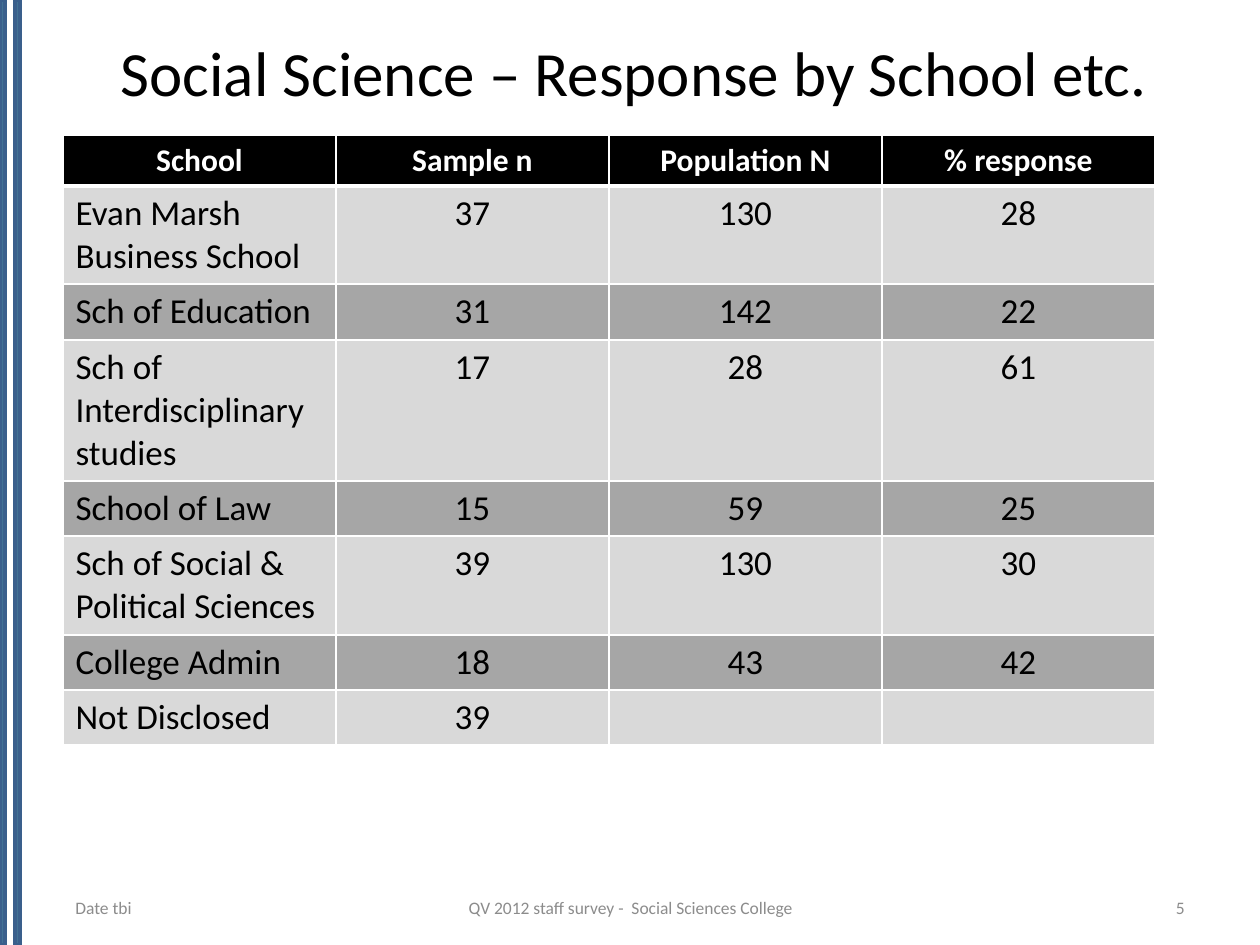
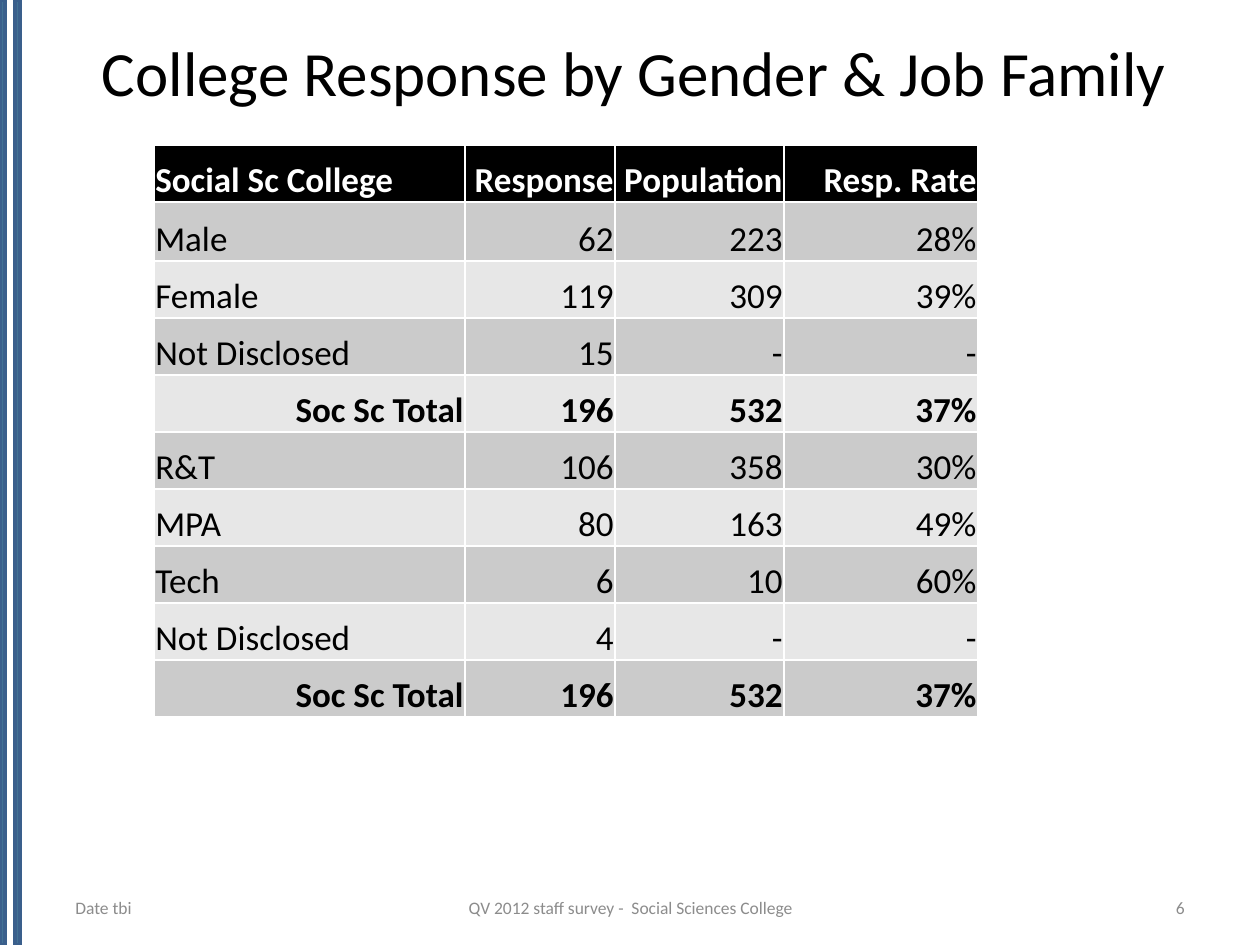
from dataclasses import dataclass

from lxml.etree import SubElement
from pptx import Presentation
from pptx.dml.color import RGBColor
from pptx.enum.shapes import MSO_SHAPE
from pptx.enum.text import MSO_ANCHOR, PP_ALIGN
from pptx.oxml.ns import qn
from pptx.slide import Slide
from pptx.table import _Cell as Cell
from pptx.text.text import TextFrame
from pptx.util import Emu, Pt

PIXELS_PER_INCH = 126
SLIDE_WIDTH, SLIDE_HEIGHT = 1260, 945

FONT = "Calibri"
BLACK = RGBColor(0x00, 0x00, 0x00)
WHITE = RGBColor(0xFF, 0xFF, 0xFF)
STRIPE_FILL = RGBColor(0x42, 0x72, 0x94)
STRIPE_LINE = RGBColor(0x3A, 0x5F, 0x8C)
FOOTER_GREY = RGBColor(0x8C, 0x8C, 0x8C)
LIGHT_GREY = RGBColor(0xD9, 0xD9, 0xD9)
MID_GREY = RGBColor(0xA6, 0xA6, 0xA6)
SILVER = RGBColor(0xCB, 0xCB, 0xCB)
PALE_GREY = RGBColor(0xE7, 0xE7, 0xE7)

LEFT, CENTER, RIGHT = PP_ALIGN.LEFT, PP_ALIGN.CENTER, PP_ALIGN.RIGHT

STRIPE_LEFTS = (0, 15)
STRIPE_WIDTH = 5
TOTAL_LABEL = "Soc Sc Total"


@dataclass(frozen=True)
class Box:
    left: int
    top: int
    width: int
    height: int


@dataclass(frozen=True)
class TextStyle:
    size: float
    color: RGBColor
    alignment: PP_ALIGN = LEFT
    bold: bool = False


@dataclass(frozen=True)
class TableDesign:
    left: int
    top: int
    column_widths: tuple[int, ...]
    row_heights: tuple[int, ...]
    band_fills: tuple[RGBColor, RGBColor]
    header_size: float
    header_label_alignment: PP_ALIGN
    value_alignment: PP_ALIGN
    header_rule: float
    cell_format: dict


@dataclass(frozen=True)
class TableSlide:
    title: str
    number: int
    design: TableDesign
    rows: tuple[tuple[str, ...], ...]


TITLE_BOX = Box(63, 16, 1142, 110)
TITLE_STYLE = TextStyle(36, BLACK, CENTER)
FOOTER_TOP, FOOTER_HEIGHT = 890, 36

SCHOOL_DESIGN = TableDesign(
    left=63,
    top=135,
    column_widths=(273,) * 4,
    row_heights=(51, 98, 56, 141, 55, 99, 55, 55),
    band_fills=(LIGHT_GREY, MID_GREY),
    header_size=18,
    header_label_alignment=CENTER,
    value_alignment=CENTER,
    header_rule=3,
    cell_format={},
)
FAMILY_DESIGN = TableDesign(
    left=154,
    top=145,
    column_widths=(311, 150, 169, 194),
    row_heights=(57, 59) + (57,) * 8,
    band_fills=(SILVER, PALE_GREY),
    header_size=20,
    header_label_alignment=LEFT,
    value_alignment=RIGHT,
    header_rule=1.5,
    cell_format={
        "vertical_anchor": MSO_ANCHOR.BOTTOM,
        "margin_left": Pt(0.75),
        "margin_top": Pt(0.75),
        "margin_right": Pt(0.75),
        "margin_bottom": Pt(0),
    },
)

TABLE_SLIDES = (
    TableSlide("Social Science – Response by School etc.", 5, SCHOOL_DESIGN, (
        ("School", "Sample n", "Population N", "% response"),
        ("Evan Marsh Business School", "37", "130", "28"),
        ("Sch of Education", "31", "142", "22"),
        ("Sch of Interdisciplinary studies", "17", "28", "61"),
        ("School of Law", "15", "59", "25"),
        ("Sch of Social & Political Sciences", "39", "130", "30"),
        ("College Admin", "18", "43", "42"),
        ("Not Disclosed", "39", "", ""),
    )),
    TableSlide("College Response by Gender & Job Family", 6, FAMILY_DESIGN, (
        ("Social Sc College", "Response", "Population", "Resp. Rate"),
        ("Male", "62", "223", "28%"),
        ("Female", "119", "309", "39%"),
        ("Not Disclosed", "15", "-", "-"),
        (TOTAL_LABEL, "196", "532", "37%"),
        ("R&T", "106", "358", "30%"),
        ("MPA", "80", "163", "49%"),
        ("Tech", "6", "10", "60%"),
        ("Not Disclosed", "4", "-", "-"),
        (TOTAL_LABEL, "196", "532", "37%"),
    )),
)


def px(length: int) -> Emu:
    return Emu(round(length * 914400 / PIXELS_PER_INCH))


def place(box: Box) -> tuple[Emu, Emu, Emu, Emu]:
    return px(box.left), px(box.top), px(box.width), px(box.height)


def apply_format(target: object, values: dict) -> None:
    for name, value in values.items():
        setattr(target, name, value)


def write_text(frame: TextFrame, text: str, style: TextStyle) -> None:
    paragraph = frame.paragraphs[0]
    paragraph.alignment = style.alignment
    if not text:
        return
    run = paragraph.add_run()
    run.text = text
    apply_format(run.font, {"name": FONT, "size": Pt(style.size), "bold": style.bold})
    run.font.color.rgb = style.color


def add_text(slide: Slide, box: Box, text: str, style: TextStyle) -> None:
    frame = slide.shapes.add_textbox(*place(box)).text_frame
    apply_format(frame, {"word_wrap": True, "vertical_anchor": MSO_ANCHOR.MIDDLE})
    write_text(frame, text, style)


def add_stripes(slide: Slide) -> None:
    for left in STRIPE_LEFTS:
        box = Box(left, 0, STRIPE_WIDTH, SLIDE_HEIGHT)
        stripe = slide.shapes.add_shape(MSO_SHAPE.RECTANGLE, *place(box))
        stripe.shadow.inherit = False
        stripe.fill.solid()
        stripe.fill.fore_color.rgb = STRIPE_FILL
        stripe.line.color.rgb = STRIPE_LINE
        stripe.line.width = Pt(2)


def add_footer(slide: Slide, number: int) -> None:
    footer_parts = (
        (63, 294, "Date tbi", LEFT),
        (431, 399, "QV 2012 staff survey -  Social Sciences College", CENTER),
        (903, 294, str(number), RIGHT),
    )
    for left, width, text, alignment in footer_parts:
        box = Box(left, FOOTER_TOP, width, FOOTER_HEIGHT)
        add_text(slide, box, text, TextStyle(10, FOOTER_GREY, alignment))


def add_borders(cell: Cell, top: float, bottom: float) -> None:
    """Draw white cell borders; must run before the fill is set."""
    properties = cell._tc.get_or_add_tcPr()
    widths = {"a:lnL": 1, "a:lnR": 1, "a:lnT": top, "a:lnB": bottom}
    for tag, width in widths.items():
        line = SubElement(properties, qn(tag), w=str(Pt(width)))
        fill = SubElement(line, qn("a:solidFill"))
        SubElement(fill, qn("a:srgbClr"), val=str(WHITE))


def cell_style(design: TableDesign, row: int, column: int, is_total: bool) -> TextStyle:
    is_header = row == 0
    if column > 0 or is_total:
        alignment = design.value_alignment
    else:
        alignment = design.header_label_alignment if is_header else LEFT
    if is_header:
        return TextStyle(design.header_size, WHITE, alignment, True)
    return TextStyle(20, BLACK, alignment, is_total)


def add_response_table(slide: Slide, design: TableDesign, rows: tuple[tuple[str, ...], ...]) -> None:
    box = Box(design.left, design.top, sum(design.column_widths), sum(design.row_heights))
    table = slide.shapes.add_table(len(rows), len(rows[0]), *place(box)).table
    apply_format(table, {"first_row": False, "horz_banding": False})
    for column, width in zip(table.columns, design.column_widths):
        column.width = px(width)
    for row, height in zip(table.rows, design.row_heights):
        row.height = px(height)

    for row_index, values in enumerate(rows):
        fill_color = design.band_fills[(row_index - 1) % 2] if row_index else BLACK
        top = design.header_rule if row_index == 1 else 1
        bottom = design.header_rule if row_index == 0 else 1
        is_total = values[0] == TOTAL_LABEL
        for column_index, text in enumerate(values):
            cell = table.cell(row_index, column_index)
            add_borders(cell, top, bottom)
            cell.fill.solid()
            cell.fill.fore_color.rgb = fill_color
            apply_format(cell, design.cell_format)
            style = cell_style(design, row_index, column_index, is_total)
            write_text(cell.text_frame, text, style)


def main() -> None:
    presentation = Presentation()
    presentation.slide_width = px(SLIDE_WIDTH)
    presentation.slide_height = px(SLIDE_HEIGHT)
    blank_layout = presentation.slide_layouts[6]
    for content in TABLE_SLIDES:
        slide = presentation.slides.add_slide(blank_layout)
        add_stripes(slide)
        add_text(slide, TITLE_BOX, content.title, TITLE_STYLE)
        add_response_table(slide, content.design, content.rows)
        add_footer(slide, content.number)
    presentation.save("out.pptx")


if __name__ == "__main__":
    main()
